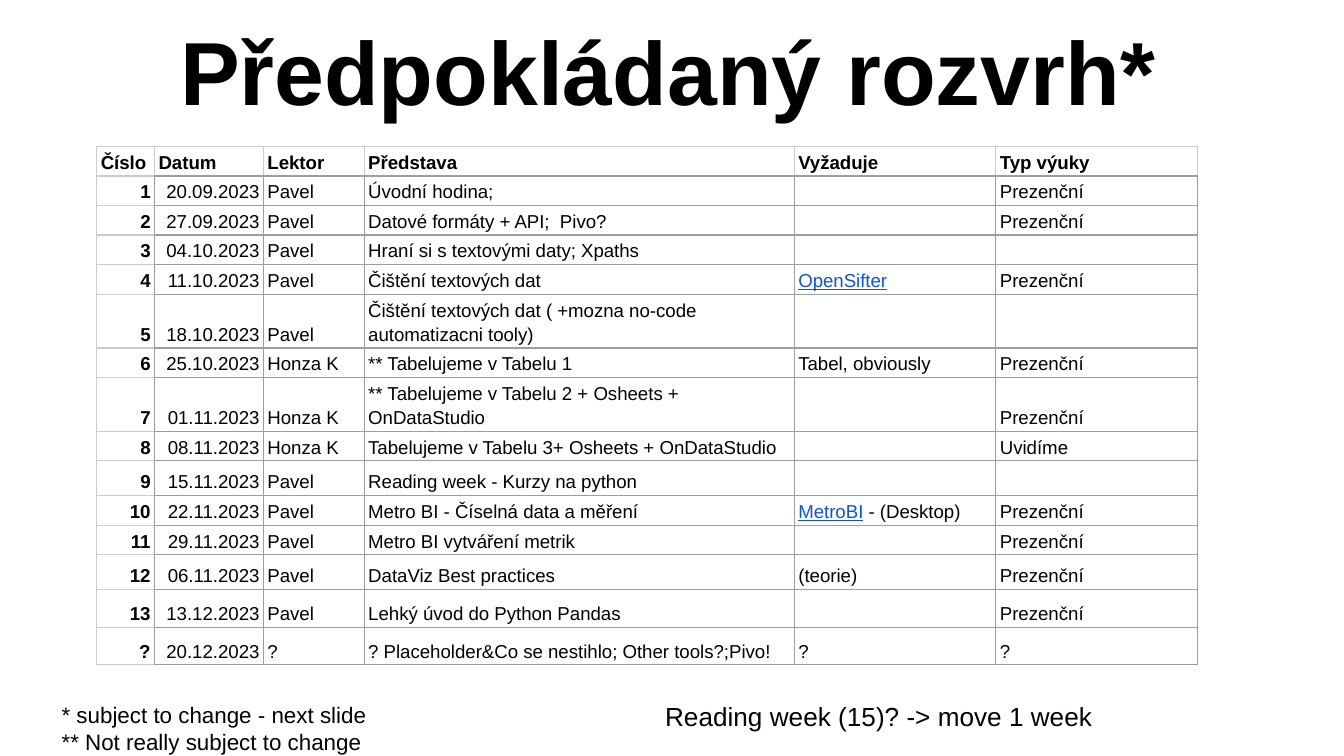
import dataclasses

import lxml.etree
import pptx
import pptx.dml.color
import pptx.enum.text
import pptx.oxml.ns
import pptx.util

Inches = pptx.util.Inches
Pt = pptx.util.Pt
Align = pptx.enum.text.PP_ALIGN
Anchor = pptx.enum.text.MSO_ANCHOR
qn = pptx.oxml.ns.qn


@dataclasses.dataclass(frozen=True)
class Theme:
    font: str = "Arial"
    ink: str = "000000"
    link: str = "1155CC"
    grid: str = "9E9E9E"
    light_grid: str = "CCCCCC"
    grid_width: float = 0.75
    title_size: int = 48
    table_size: int = 10
    footnote_size: int = 12
    remark_size: int = 14


THEME = Theme()
LINKS = ("OpenSifter", "MetroBI")
COLUMN_WIDTHS = (0.43, 0.81, 0.75, 3.2, 1.5, 1.5)
ROW_HEIGHT = 0.22
TALL_ROWS = {5: 0.4, 7: 0.4, 9: 0.26, 12: 0.26, 13: 0.28, 14: 0.28}
SCHEDULE = (
    ("Číslo", "Datum", "Lektor", "Představa", "Vyžaduje", "Typ výuky"),
    ("1", "20.09.2023", "Pavel", "Úvodní hodina;", "", "Prezenční"),
    ("2", "27.09.2023", "Pavel", "Datové formáty + API;  Pivo?", "", "Prezenční"),
    ("3", "04.10.2023", "Pavel", "Hraní si s textovými daty; Xpaths", "", ""),
    ("4", "11.10.2023", "Pavel", "Čištění textových dat", "OpenSifter", "Prezenční"),
    ("5", "18.10.2023", "Pavel",
     "Čištění textových dat ( +mozna no-code automatizacni tooly)", "", ""),
    ("6", "25.10.2023", "Honza K", "** Tabelujeme v Tabelu 1", "Tabel, obviously", "Prezenční"),
    ("7", "01.11.2023", "Honza K",
     "** Tabelujeme v Tabelu 2 + Osheets + OnDataStudio", "", "Prezenční"),
    ("8", "08.11.2023", "Honza K",
     "Tabelujeme v Tabelu 3+ Osheets + OnDataStudio", "", "Uvidíme"),
    ("9", "15.11.2023", "Pavel", "Reading week - Kurzy na python", "", ""),
    ("10", "22.11.2023", "Pavel", "Metro BI - Číselná data a měření",
     "MetroBI - (Desktop)", "Prezenční"),
    ("11", "29.11.2023", "Pavel", "Metro BI vytváření metrik", "", "Prezenční"),
    ("12", "06.11.2023", "Pavel", "DataViz Best practices", "(teorie)", "Prezenční"),
    ("13", "13.12.2023", "Pavel", "Lehký úvod do Python Pandas", "", "Prezenční"),
    ("?", "20.12.2023", "?", "? Placeholder&Co se nestihlo; Other tools?;Pivo!", "?", "?"),
)


def rgb(color):
    return pptx.dml.color.RGBColor.from_string(color)


def style_paragraph(paragraph, size, bold=False, align=Align.LEFT):
    paragraph.alignment = align
    paragraph.font.name = THEME.font
    paragraph.font.size = Pt(size)
    paragraph.font.bold = bold
    paragraph.font.color.rgb = rgb(THEME.ink)


def set_margins(frame, margin):
    frame.margin_left = frame.margin_right = Inches(margin)
    frame.margin_top = frame.margin_bottom = Inches(margin)


def place_title(slide, box, text):
    title = slide.shapes.title
    title.left, title.top, title.width, title.height = map(Inches, box)
    frame = title.text_frame
    frame.text = text
    frame.word_wrap = True
    frame.auto_size = pptx.enum.text.MSO_AUTO_SIZE.NONE
    frame.vertical_anchor = Anchor.BOTTOM
    set_margins(frame, 0.1)
    style_paragraph(frame.paragraphs[0], THEME.title_size, True, Align.CENTER)


def set_borders(cell, colors):
    properties = cell._tc.get_or_add_tcPr()
    for index, (side, color) in enumerate(zip("LRTB", colors)):
        line = lxml.etree.Element(qn(f"a:ln{side}"), w=str(Pt(THEME.grid_width)))
        fill = lxml.etree.SubElement(line, qn("a:solidFill"))
        lxml.etree.SubElement(fill, qn("a:srgbClr"), val=color)
        properties.insert(index, line)


def border_colors(row, column):
    light, dark = THEME.light_grid, THEME.grid
    if row == 0:
        return light, light, light, light if column == 0 else dark
    if column == 0:
        return light, dark, light, light
    return dark, dark, dark, dark


def write_entry(paragraph, text):
    link = next((name for name in LINKS if text.startswith(name)), "")
    if link:
        linked = paragraph.add_run()
        linked.text = link
        linked.font.color.rgb = rgb(THEME.link)
        linked.font.underline = True
    rest = text[len(link):]
    if rest:
        paragraph.add_run().text = rest
    if not text:
        lxml.etree.SubElement(paragraph._p, qn("a:endParaRPr"),
                              sz=str(THEME.table_size * 100))


def fill_cell(cell, text, row, column):
    cell.fill.background()
    cell.vertical_anchor = Anchor.BOTTOM
    cell.margin_left = cell.margin_right = Inches(0.03)
    cell.margin_top = cell.margin_bottom = Inches(0.02)
    paragraph = cell.text_frame.paragraphs[0]
    align = Align.RIGHT if row > 0 and column < 2 else Align.LEFT
    style_paragraph(paragraph, THEME.table_size, row == 0 or column == 0, align)
    paragraph.line_spacing = 1.15
    write_entry(paragraph, text)
    set_borders(cell, border_colors(row, column))


def place_schedule(slide, left, top):
    heights = [TALL_ROWS.get(row, ROW_HEIGHT) for row in range(len(SCHEDULE))]
    schedule = slide.shapes.add_table(
        len(SCHEDULE), len(COLUMN_WIDTHS), Inches(left), Inches(top),
        Inches(sum(COLUMN_WIDTHS)), Inches(sum(heights))).table
    schedule.first_row = schedule.horz_banding = False
    for column, width in zip(schedule.columns, COLUMN_WIDTHS):
        column.width = Inches(width)
    for row, (entries, height) in enumerate(zip(SCHEDULE, heights)):
        schedule.rows[row].height = Inches(height)
        for column, text in enumerate(entries):
            fill_cell(schedule.cell(row, column), text, row, column)


def place_note(slide, box, lines, size):
    frame = slide.shapes.add_textbox(*map(Inches, box)).text_frame
    frame.word_wrap = True
    set_margins(frame, 0.1)
    frame.text = "\n".join(lines)
    for paragraph in frame.paragraphs:
        style_paragraph(paragraph, size)


def main():
    deck = pptx.Presentation()
    deck.slide_width = Inches(10)
    deck.slide_height = deck.slide_width * 9 // 16
    slide = deck.slides.add_slide(deck.slide_layouts.get_by_name("Title Only"))
    place_title(slide, (0.72, 0.3, 8.5, 0.72), "Předpokládaný rozvrh*")
    place_schedule(slide, 0.72, 1.09)
    place_note(slide, (0.36, 5.12, 4.41, 0.36),
               ("* subject to change - next slide", "** Not really subject to change"),
               THEME.footnote_size)
    place_note(slide, (4.85, 5.11, 4.41, 0.43),
               ("Reading week (15)? -> move 1 week",), THEME.remark_size)
    deck.save("out.pptx")


if __name__ == "__main__":
    main()
